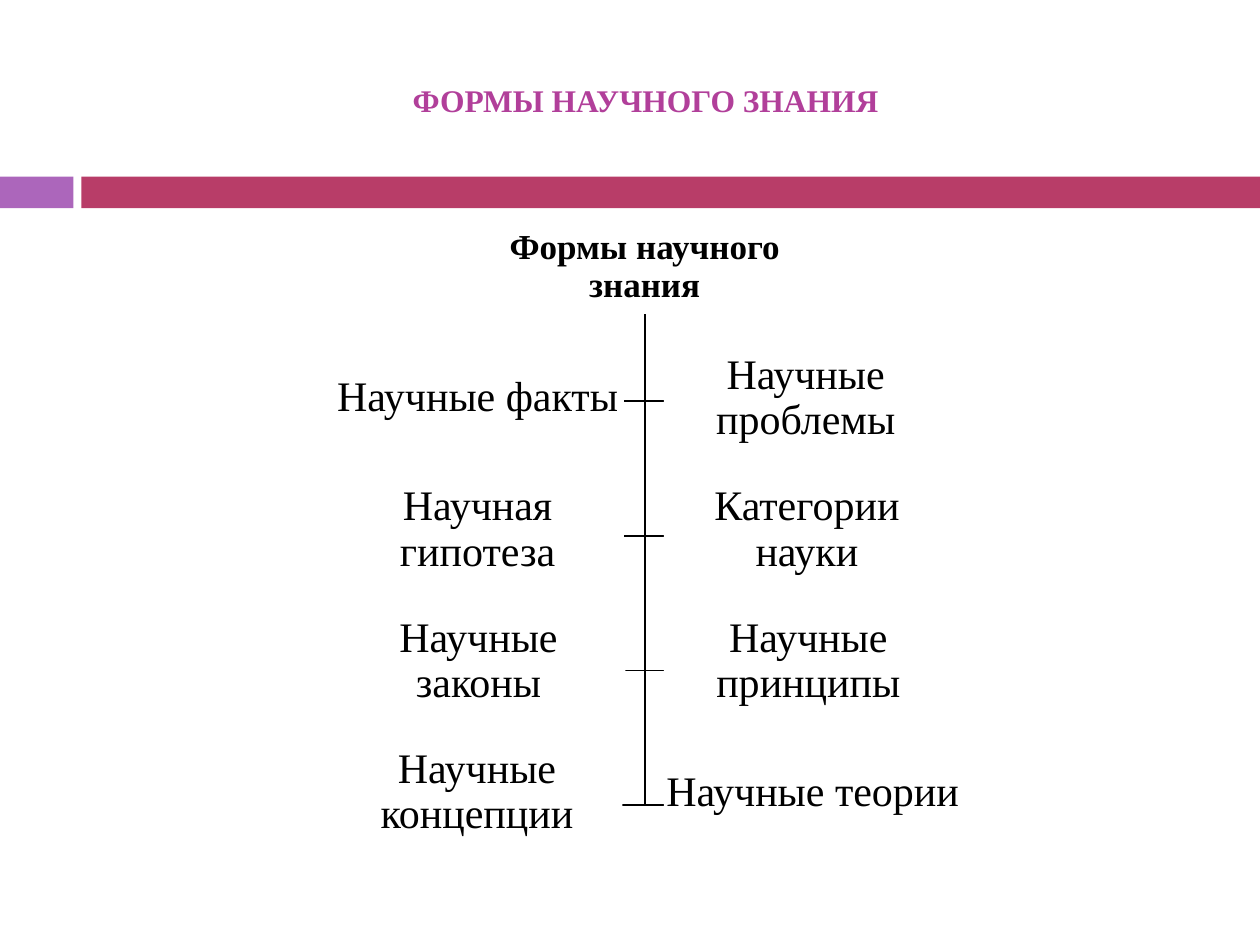
import pptx
import pptx.dml.color
import pptx.enum.shapes
import pptx.enum.text
import pptx.util

Pt = pptx.util.Pt
RGBColor = pptx.dml.color.RGBColor
RECTANGLE = pptx.enum.shapes.MSO_SHAPE.RECTANGLE

FONT = "Times New Roman"
BLACK = RGBColor(0x00, 0x00, 0x00)
WHITE = RGBColor(0xFF, 0xFF, 0xFF)
VIOLET = RGBColor(0xAC, 0x66, 0xBB)
CRIMSON = RGBColor(0xB8, 0x3D, 0x68)
MAGENTA = RGBColor(0xB1, 0x3F, 0x9A)

# Left and right label with the width of each box
ROWS = [
    ("Научные факты", 167, "Научные проблемы", 162),
    ("Научная гипотеза", 167, "Категории науки", 163.5),
    ("Научные законы", 168, "Научные принципы", 165),
    ("Научные концепции", 166.3, "Научные теории", 170),
]
LABEL_HEIGHT = 52.6
LABEL_PITCH = 75.1
BRANCH_PITCH = 77


def format_text(text_frame, size, color, bold):
    text_frame.word_wrap = True
    text_frame.vertical_anchor = pptx.enum.text.MSO_ANCHOR.MIDDLE
    paragraph = text_frame.paragraphs[0]
    paragraph.alignment = pptx.enum.text.PP_ALIGN.CENTER
    font = paragraph.runs[0].font
    font.name = FONT
    font.size = Pt(size)
    font.bold = bold
    font.color.rgb = color


def add_box(slide, left, top, width, height, color):
    box = slide.shapes.add_shape(RECTANGLE, Pt(left), Pt(top), Pt(width), Pt(height))
    box.shadow.inherit = False
    box.fill.solid()
    box.fill.fore_color.rgb = color
    box.line.fill.background()
    return box


def add_label(slide, text, left, top, width, size=24, bold=False):
    text_frame = add_box(slide, left, top, width, LABEL_HEIGHT, WHITE).text_frame
    text_frame.margin_left = text_frame.margin_right = Pt(1)
    text_frame.margin_top = text_frame.margin_bottom = Pt(1)
    text_frame.text = text
    text_frame.paragraphs[0].line_spacing = 0.9
    format_text(text_frame, size, BLACK, bold)


def add_branch(slide, spine, top, end, bottom):
    """Draw an elbow line down the spine and sideways to a label."""
    builder = slide.shapes.build_freeform(Pt(spine), Pt(top))
    builder.add_line_segments([(Pt(spine), Pt(bottom)), (Pt(end), Pt(bottom))], close=False)
    branch = builder.convert_to_shape()
    branch.shadow.inherit = False
    branch.fill.background()
    branch.line.color.rgb = BLACK
    branch.line.width = Pt(1)


def add_band(slide, top, width, height):
    add_box(slide, 0, top, 42, height, VIOLET)
    add_box(slide, 46.5, top, width - 46.5, height, CRIMSON)


def add_title(slide, left, top, width, height):
    title = slide.shapes.title
    title.left, title.top, title.width, title.height = map(Pt, (left, top, width, height))
    title.text_frame.text = "ФОРМЫ НАУЧНОГО ЗНАНИЯ"
    format_text(title.text_frame, 18, MAGENTA, True)


def add_tree(slide, left, top):
    spine = left + 179
    right = left + 190
    spine_top = top + LABEL_HEIGHT + 0.7
    for index, (_, left_width, _, _) in reversed(list(enumerate(ROWS))):
        bottom = top + 103 + index * BRANCH_PITCH
        for end in (right, left + left_width):
            add_branch(slide, spine, spine_top, end, bottom)

    add_label(slide, "Формы научного знания", spine - 84.5, top, 169, 20, True)
    for index, (left_text, left_width, right_text, right_width) in enumerate(ROWS):
        label_top = top + (index + 1) * LABEL_PITCH
        add_label(slide, left_text, left, label_top, left_width)
        add_label(slide, right_text, right, label_top, right_width)


def main():
    presentation = pptx.Presentation()
    presentation.slide_width, presentation.slide_height = Pt(720), Pt(540)
    slide = presentation.slides.add_slide(presentation.slide_layouts[5])
    add_band(slide, 101, 720, 18)
    add_title(slide, 48, 18, 642, 78)
    add_tree(slide, 189.4, 126.2)
    presentation.save("out.pptx")


if __name__ == "__main__":
    main()
